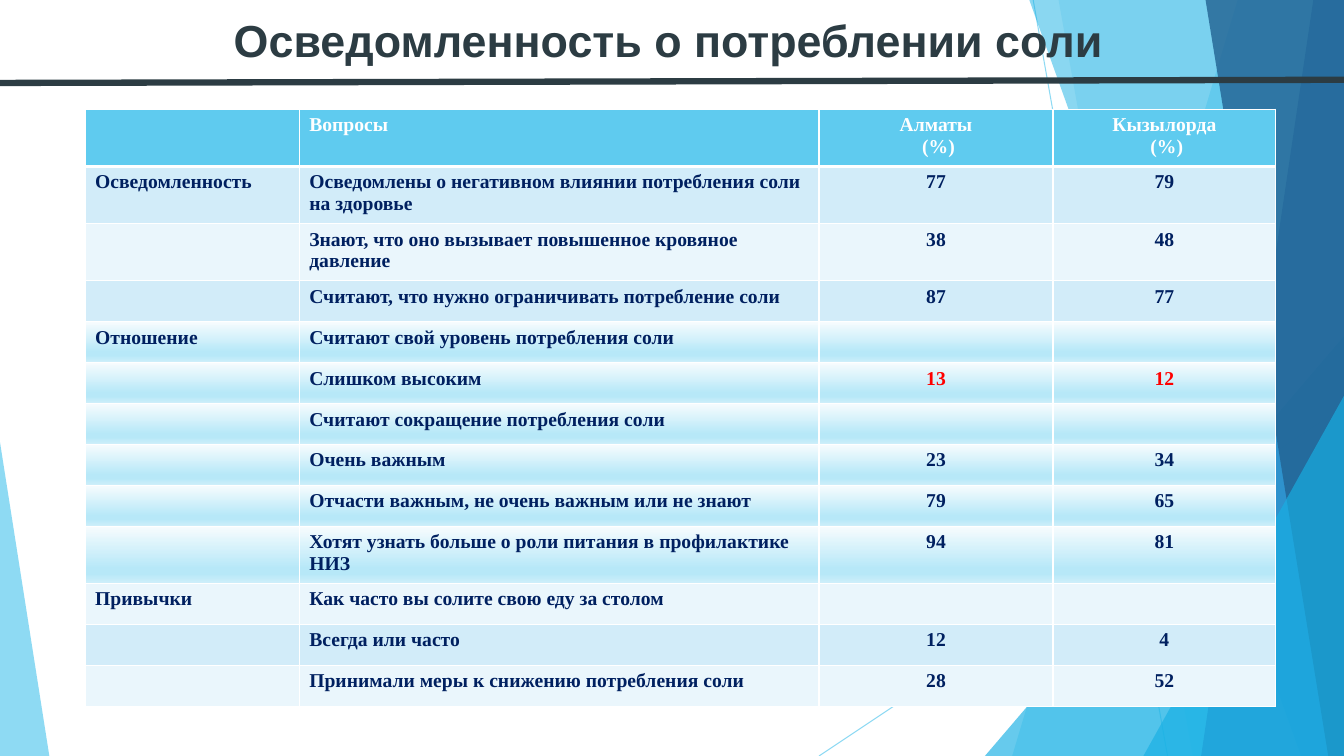
from dataclasses import dataclass

import lxml.etree
import pptx
import pptx.dml.color
import pptx.enum.dml
import pptx.enum.shapes
import pptx.enum.text
import pptx.oxml
import pptx.oxml.ns
import pptx.util

PX = 9525
WIDTH, HEIGHT = 1280, 720
NAVY, RED, WHITE, SLATE = "002060", "FF0000", "FFFFFF", "2C3C43"
SKY, AZURE, PALE, PALER = "5FCBEF", "17B0E4", "D2ECF9", "EAF6FC"
GRADIENT = ((0, "F7FCFE"), (74, "B7E8F8"), (83, "B7E8F8"), (100, "CFEFFA"))
LEFT, CENTER = pptx.enum.text.PP_ALIGN.LEFT, pptx.enum.text.PP_ALIGN.CENTER


@dataclass
class Stroke:
    x1: int
    y1: int
    x2: int
    y2: int
    color: str
    width: float
    alpha: int = 100


@dataclass
class Band:
    top_x: int
    bottom_x: int
    color: str
    alpha: int


@dataclass
class Triangle:
    x: int
    y: int
    w: int
    h: int
    apex: int
    color: str
    alpha: int


@dataclass
class Row:
    topic: str
    question: str
    almaty: str
    kyzylorda: str
    fill: str
    color: str = NAVY


DECOR = [
    Stroke(984, 0, 1112, 720, SKY, 0.75, 70),
    Stroke(1280, 387, 780, 720, SKY, 0.75, 70),
    Band(1179, 964, SKY, 36),
    Band(1008, 1136, SKY, 20),
    Triangle(938, 320, 342, 400, 1, AZURE, 66),
    Band(980, 1239, AZURE, 50),
    Band(1251, 1144, "2E83C3", 70),
    Band(1148, 1265, "226292", 80),
    Triangle(1089, 377, 191, 343, 1, AZURE, 66),
    Triangle(0, 421, 47, 299, 0, SKY, 70),
    Stroke(0, 79, 1280, 76, SLATE, 4.5),
]
ROWS = [
    Row("", "Вопросы", "Алматы\n (%)", "Кызылорда\n (%)", SKY, WHITE),
    Row("Осведомленность", "Осведомлены о негативном влиянии потребления соли на здоровье",
        "77", "79", PALE),
    Row("", "Знают, что оно вызывает повышенное кровяное давление", "38", "48", PALER),
    Row("", "Считают, что нужно ограничивать потребление соли", "87", "77", PALE),
    Row("Отношение", "Считают свой уровень потребления соли", "", "", "gradient"),
    Row("", "Слишком высоким", "13", "12", "gradient"),
    Row("", "Считают сокращение потребления соли", "", "", "gradient"),
    Row("", "Очень важным", "23", "34", "gradient"),
    Row("", "Отчасти важным, не очень важным или не знают", "79", "65", "gradient"),
    Row("", "Хотят узнать больше о роли питания в профилактике НИЗ", "94", "81", "gradient"),
    Row("Привычки", "Как часто вы солите свою еду за столом", "", "", PALER),
    Row("", "Всегда или часто", "12", "4", PALE),
    Row("", "Принимали меры к снижению потребления соли", "28", "52", PALER),
]
HIGHLIGHTED = "Слишком высоким"
COLUMNS = (204, 495, 223, 212)
ROW_HEIGHT = 39


def px(*values: int) -> list:
    return [pptx.util.Emu(v * PX) for v in values]


def set_color(fill, color: str, alpha: int = 100) -> None:
    fill.solid()
    fill.fore_color.rgb = pptx.dml.color.RGBColor.from_string(color)
    if alpha < 100:
        clr = fill._xPr.find(".//" + pptx.oxml.ns.qn("a:srgbClr"))
        lxml.etree.SubElement(clr, pptx.oxml.ns.qn("a:alpha")).set("val", str(alpha * 1000))


def set_font(font, color: str, **values) -> None:
    for name, value in values.items():
        setattr(font, name, value)
    set_color(font.fill, color)


def draw_stroke(shapes, item: Stroke) -> None:
    sp = shapes.add_connector(pptx.enum.shapes.MSO_CONNECTOR.STRAIGHT,
                              *px(item.x1, item.y1, item.x2, item.y2))
    sp.line.width = pptx.util.Pt(item.width)
    set_color(sp.line.fill, item.color, item.alpha)
    lxml.etree.SubElement(sp._element.spPr, pptx.oxml.ns.qn("a:effectLst"))


def draw_solid(shapes, item: Band | Triangle) -> None:
    if isinstance(item, Band):
        builder = shapes.build_freeform(item.top_x, -1, scale=PX)
        builder.add_line_segments([(WIDTH, -1), (WIDTH, HEIGHT), (item.bottom_x, HEIGHT)])
        sp = builder.convert_to_shape()
    else:
        sp = shapes.add_shape(pptx.enum.shapes.MSO_SHAPE.ISOSCELES_TRIANGLE,
                              *px(item.x, item.y, item.w, item.h))
        sp.adjustments[0] = item.apex
    sp.shadow.inherit = False
    sp.line.fill.background()
    set_color(sp.fill, item.color, item.alpha)


def format_cell(cell, fill: str, top: int, bottom: int) -> None:
    ns = pptx.oxml.ns.nsdecls("a")
    tc_pr = cell._tc.get_or_add_tcPr()
    for side, width in (("L", 1), ("R", 1), ("T", top), ("B", bottom)):
        tc_pr.append(pptx.oxml.parse_xml(
            f'<a:ln{side} {ns} w="{width * 12700}"><a:solidFill><a:srgbClr val="{WHITE}"/>'
            f'</a:solidFill></a:ln{side}>'))
    if fill == "gradient":
        stops = "".join(f'<a:gs pos="{pos * 1000}"><a:srgbClr val="{color}"/></a:gs>'
                        for pos, color in GRADIENT)
        tc_pr.append(pptx.oxml.parse_xml(
            f'<a:gradFill {ns}><a:gsLst>{stops}</a:gsLst><a:lin ang="5400000"/></a:gradFill>'))
    else:
        set_color(cell.fill, fill)


def draw_table(shapes) -> None:
    frame = shapes.add_table(len(ROWS), len(COLUMNS),
                             *px(81, 104, sum(COLUMNS), ROW_HEIGHT * len(ROWS)))
    table = frame.table
    table.horz_banding = False
    for column, width in zip(table.columns, COLUMNS):
        column.width = px(width)[0]
    for i, row in enumerate(ROWS):
        table.rows[i].height = px(ROW_HEIGHT)[0]
        for j, text in enumerate((row.topic, row.question, row.almaty, row.kyzylorda)):
            cell = table.cell(i, j)
            format_cell(cell, row.fill, 3 if i == 1 else 1, 3 if i == 0 else 1)
            if not text:
                continue
            cell.text_frame.text = text
            color = RED if j > 1 and row.question == HIGHLIGHTED else row.color
            for p in cell.text_frame.paragraphs:
                p.alignment = CENTER if j > 1 else LEFT
                set_font(p.runs[0].font, color, name="Times New Roman",
                         size=pptx.util.Pt(14), bold=True)


def place_title(shapes) -> None:
    sp = shapes.title
    shapes._spTree.append(sp._element)
    for name, value in zip(("left", "top", "width", "height"), px(213, 7, 853, 61)):
        setattr(sp, name, value)
    tf = sp.text_frame
    tf.text = "Осведомленность о потреблении соли"
    frame_format = {"word_wrap": False,
                    "auto_size": pptx.enum.text.MSO_AUTO_SIZE.SHAPE_TO_FIT_TEXT,
                    "vertical_anchor": pptx.enum.text.MSO_ANCHOR.TOP}
    for name, value in frame_format.items():
        setattr(tf, name, value)
    p = tf.paragraphs[0]
    p.alignment = LEFT
    set_font(p.runs[0].font, SLATE, name="Arial", size=pptx.util.Pt(32), bold=True)


def main() -> None:
    prs = pptx.Presentation()
    prs.slide_width, prs.slide_height = px(WIDTH, HEIGHT)
    s = prs.slides.add_slide(prs.slide_layouts[5])
    set_color(s.background.fill, WHITE)
    for item in DECOR:
        draw = draw_stroke if isinstance(item, Stroke) else draw_solid
        draw(s.shapes, item)
    place_title(s.shapes)
    draw_table(s.shapes)
    prs.save("out.pptx")


if __name__ == "__main__":
    main()
